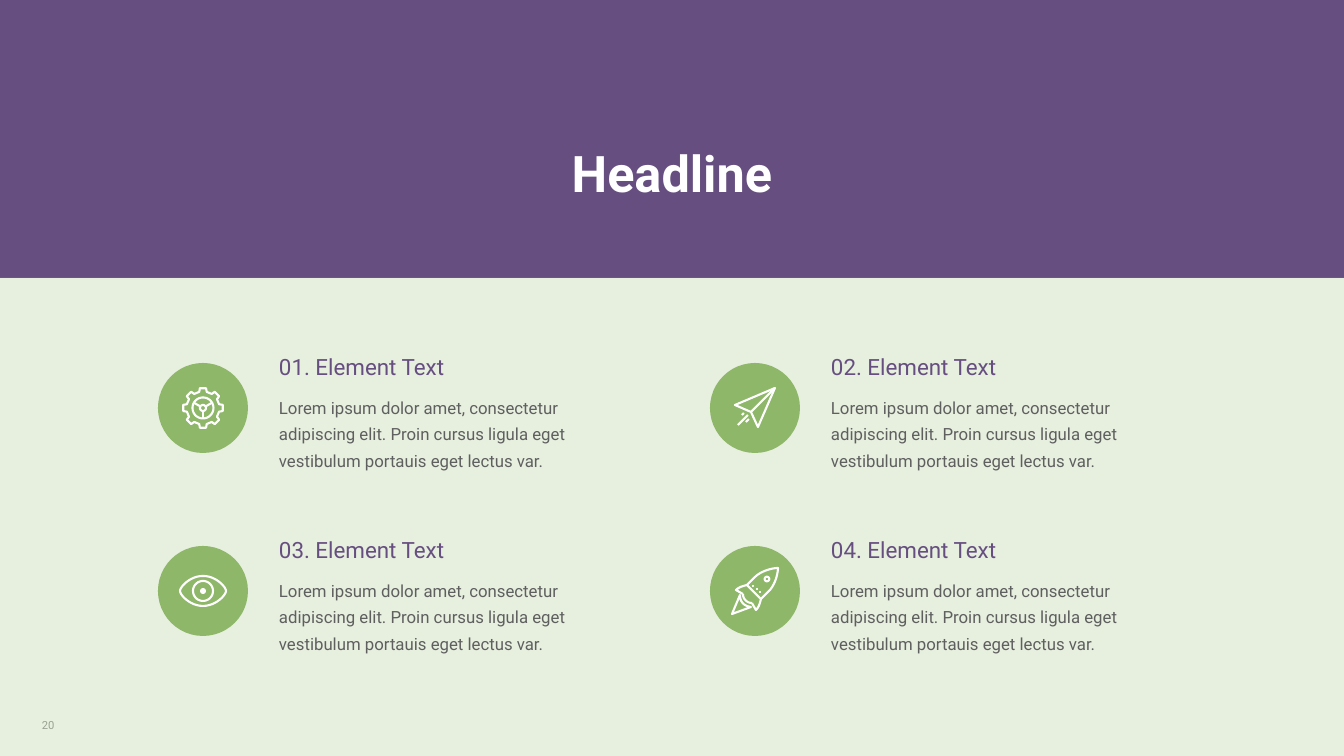
"""Builds a headline slide with four numbered elements, each beside a round icon."""
import math
from dataclasses import dataclass

from lxml import etree
from pptx import Presentation
from pptx import util as u
from pptx.dml.color import RGBColor
from pptx.enum import shapes, text
from pptx.oxml import ns


@dataclass(frozen=True)
class Theme:
    font: str = "Roboto"
    purple: str = "664F80"
    green: str = "8EB769"
    pale: str = "D1E1C2"
    white: str = "FFFFFF"
    grey: str = "5E5F5F"
    number_grey: str = "5F6060"
    headline_size: int = 36
    heading_size: int = 16
    body_size: int = 12
    number_size: int = 8
    stroke: float = 1.5


def px(length):
    return u.Emu(round(length * 914400 / 100.8))


def polar(radius, degrees):
    angle = math.radians(degrees)
    return radius * math.cos(angle), radius * math.sin(angle)


def ring(radius, cx=0, cy=0):
    spots = [polar(radius, step * 10) for step in range(37)]
    return [(cx + x, cy + y) for x, y in spots]


def bezier(*controls, steps=12):
    points = []
    for step in range(steps + 1):
        t = step / steps
        weights = [math.comb(3, i) * t**i * (1 - t)**(3 - i) for i in range(4)]
        points.append(tuple(sum(w * c[axis] for w, c in zip(weights, controls))
                            for axis in (0, 1)))
    return points


def mirror(points):
    return [(-y, -x) for x, y in reversed(points)]


def gear():
    profile = [(16.5, -13), (20, -9), (20, 9), (16.5, 13)]
    rim = [polar(radius, tooth * 45 + turn)
           for tooth in range(8) for radius, turn in profile]
    spokes = [[polar(3, turn), polar(10.5, turn)] for turn in (90, 210, 330)]
    return [rim + rim[:1], ring(10.5), ring(3), *spokes], []


def plane():
    tip, wing, fold, tail = (20, -20), (-20, -3), (-4, 4), (3, 19)
    trails = [[(-6, 11), (-9, 14)], [(-7, 7), (-17, 17)], [(-11, 5), (-13, 7)]]
    return [[tip, wing, fold, tail, tip], [fold, tip], *trails], []


def eye():
    upper_left = bezier((-23, 0), (-23, -4), (-13, -15), (0, -15))
    upper = upper_left + [(-x, y) for x, y in reversed(upper_left)]
    lid = upper + [(x, -y) for x, y in reversed(upper)]
    return [lid, ring(10)], [(0, 0, 3)]


def rocket():
    left_side = [(-8, -6)] + bezier((0, -14), (6, -20), (17, -23), (23, -23))
    body = left_side + mirror(left_side) + left_side[:1]
    left_fin = bezier((-8, -6), (-12, -5), (-16, -4), (-19, -1)) + [(-12, 3)]
    base = bezier((-12, 3), (-12, 8), (-8, 12), (-3, 12))
    flame = bezier((-15, 4), (-15, 11), (-11, 15), (-4, 16)) + [(-23, 23), (-15, 4)]
    rivets = [(-2, -5, 1), (2, -2, 1), (5, 1, 1)]
    return [body, left_fin, mirror(left_fin), base, flame, ring(2.3, 12, -12)], rivets


class Slide:
    """Holds the theme and the current slide, and draws each kind of element."""

    def __init__(self, deck, theme):
        self.theme = theme
        self.shapes = deck.slides.add_slide(deck.slide_layouts[6]).shapes

    def block(self, preset, left, top, width, height, color, alpha=None):
        shape = self.shapes.add_shape(preset, px(left), px(top), px(width), px(height))
        shape.shadow.inherit = False
        shape.line.fill.background()
        shape.fill.solid()
        shape.fill.fore_color.rgb = RGBColor.from_string(color)
        if alpha:
            tint = shape.fill._xPr.find(".//" + ns.qn("a:srgbClr"))
            etree.SubElement(tint, ns.qn("a:alpha"), val=str(alpha * 1000))

    def rect(self, *box, **style):
        self.block(shapes.MSO_SHAPE.RECTANGLE, *box, **style)

    def disc(self, cx, cy, radius, color):
        self.block(shapes.MSO_SHAPE.OVAL, cx - radius, cy - radius,
                   2 * radius, 2 * radius, color)

    def text(self, words, left, top, width, height, *, size, color, bold=False,
             align=text.PP_ALIGN.LEFT, spacing=None, inset=(0, 0)):
        box = self.shapes.add_textbox(px(left), px(top), px(width), px(height))
        frame = box.text_frame
        frame.word_wrap = True
        frame.auto_size = text.MSO_AUTO_SIZE.SHAPE_TO_FIT_TEXT
        frame.margin_left = frame.margin_right = px(inset[0])
        frame.margin_top = frame.margin_bottom = px(inset[1])
        paragraph = frame.paragraphs[0]
        paragraph.alignment = align
        paragraph.line_spacing = spacing
        run = paragraph.add_run()
        run.text = words
        run.font.name = self.theme.font
        run.font.size = u.Pt(size)
        run.font.bold = bold
        run.font.color.rgb = RGBColor.from_string(color)

    def icon(self, cx, cy, strokes, dots):
        placed = [[(px(cx + x), px(cy + y)) for x, y in stroke] for stroke in strokes]
        builder = self.shapes.build_freeform(*placed[0][0], scale=1.0)
        for number, points in enumerate(placed):
            if number:
                builder.move_to(*points[0])
            builder.add_line_segments(points[1:], close=points[0] == points[-1])
        outline = builder.convert_to_shape()
        outline.shadow.inherit = False
        outline.fill.background()
        outline.line.color.rgb = RGBColor.from_string(self.theme.white)
        outline.line.width = u.Pt(self.theme.stroke)
        etree.SubElement(outline.line._get_or_add_ln(), ns.qn("a:round"))
        for x, y, radius in dots:
            self.disc(cx + x, cy + y, radius, self.theme.white)

    def element(self, number, left, top, drawing):
        theme = self.theme
        self.disc(left + 45, top + 45, 45, theme.green)
        self.icon(left + 45, top + 45, *drawing)
        self.text(f"{number:02}. Element Text", left + 121, top - 10, 246, 27,
                  size=theme.heading_size, color=theme.purple)
        self.text("Lorem ipsum dolor amet, consectetur adipiscing elit. Proin cursus "
                  "ligula eget vestibulum portauis eget lectus var.",
                  left + 121, top + 29, 355, 80,
                  size=theme.body_size, color=theme.grey, spacing=1.3)


def main():
    theme = Theme()
    deck = Presentation()
    deck.slide_width, deck.slide_height = px(1344), px(756)
    slide = Slide(deck, theme)
    slide.text("20", 32, 713, 172, 24, size=theme.number_size,
               color=theme.number_grey, inset=(10, 5))
    slide.rect(0, 0, 1344, 278, color=theme.purple)
    slide.rect(0, 278, 1344, 478, color=theme.pale, alpha=51)
    slide.text("Headline", 536, 142, 272, 61, size=theme.headline_size,
               color=theme.white, bold=True, align=text.PP_ALIGN.CENTER)
    for index, drawing in enumerate((gear(), plane(), eye(), rocket())):
        row, column = divmod(index, 2)
        slide.element(index + 1, 158 + column * 552, 363 + row * 183, drawing)
    deck.save("out.pptx")


if __name__ == "__main__":
    main()
